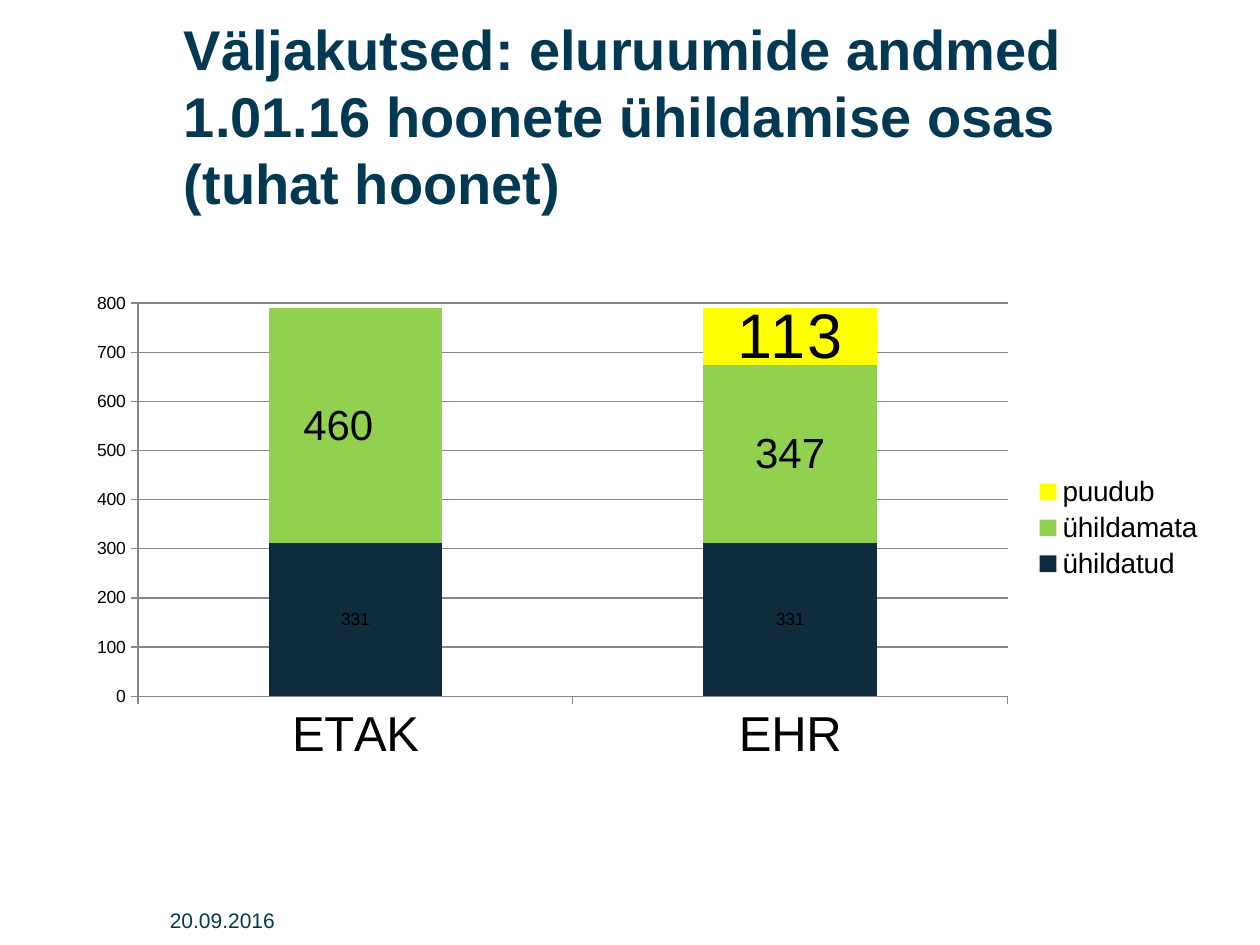
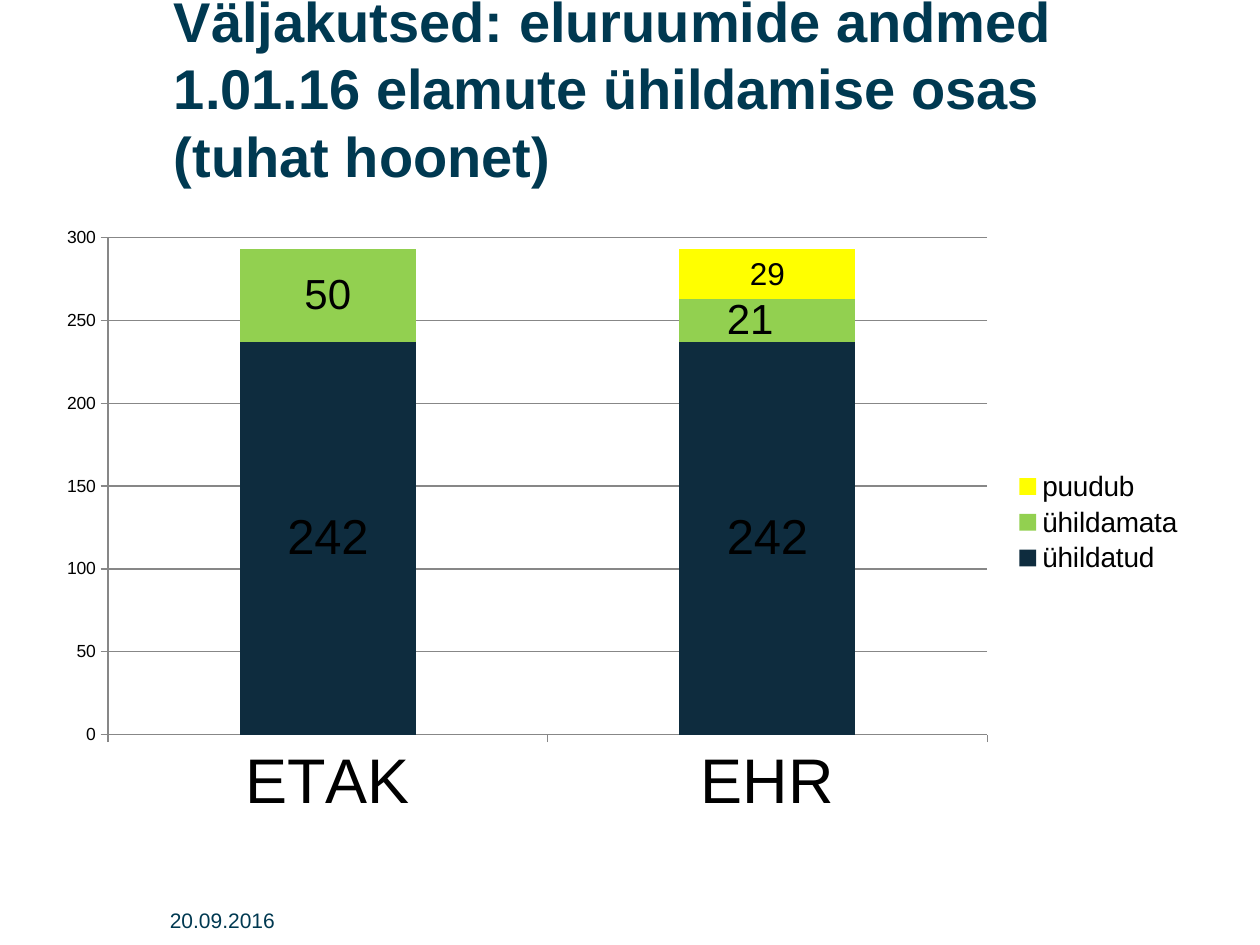
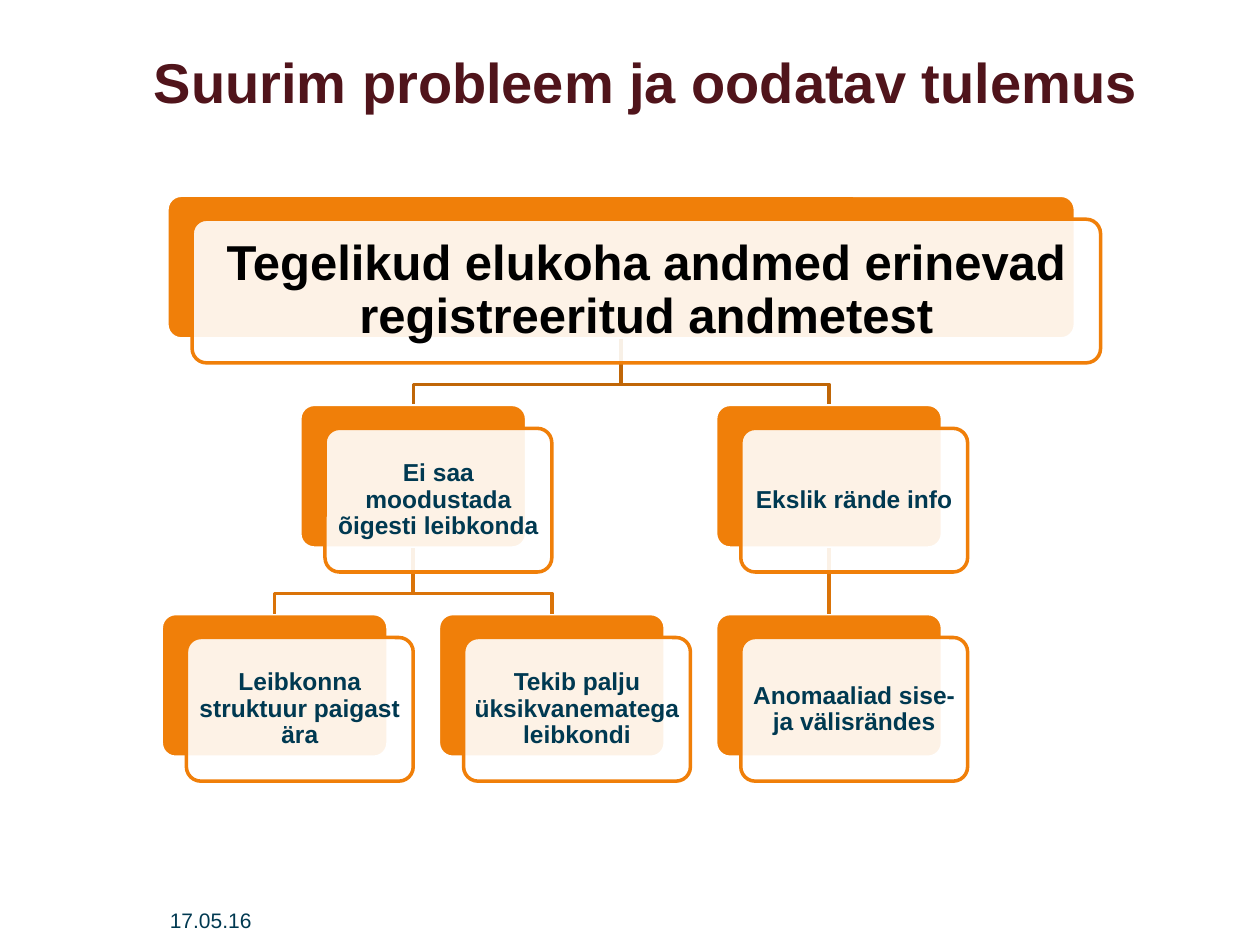
import dataclasses
import typing

import pptx
import pptx.chart.data
import pptx.dml.color
import pptx.enum.chart
import pptx.enum.shapes
import pptx.enum.text
import pptx.oxml.ns
import pptx.oxml.xmlchemy
import pptx.util

Inches = pptx.util.Inches
Pt = pptx.util.Pt

FONT = "Arial"
COLORS = {
    "navy": "003951",
    "maroon": "50141B",
    "black": "000000",
    "white": "FFFFFF",
    "orange": "F07F09",
    "upper_link": "C06607",
    "lower_link": "DA7308",
    "grid": "878787",
    "ühildatud": "0E2C3E",
    "ühildamata": "92D050",
    "puudub": "FFFF00",
}
DATE_BOX = (1.25, 7.1, 2.33, 0.4)
CARD_HEIGHT = 1.14
CARD_WIDTH = 1.8
ROOT_WIDTH = 7.21
COLUMN_STEP = 2.2
LEVEL_STEP = 1.66
FRONT_SHIFT = (0.2, 0.19)
BEND_DROP = 0.36


@dataclasses.dataclass
class Stack:
    """One chart series with its shown labels."""

    name: str
    values: tuple
    labels: tuple
    size: int
    shifted: typing.Optional[int] = None


@dataclasses.dataclass
class Card:
    """One card of the problem tree, centred on a column number."""

    text: str
    column: float
    level: int
    parent: typing.Optional[int] = None


def rgb(name):
    """Return the named colour."""
    return pptx.dml.color.RGBColor.from_string(COLORS[name])


def style_font(font, size, color="black", bold=False):
    """Apply the shared typeface with a size, colour and weight."""
    font.name, font.size, font.bold = FONT, Pt(size), bold
    font.color.rgb = rgb(color)


def fill_text(frame, text, size, color, bold=False, inset=None):
    """Write one vertically centred paragraph and return it."""
    frame.text = text
    frame.word_wrap = True
    frame.auto_size = pptx.enum.text.MSO_AUTO_SIZE.NONE
    frame.vertical_anchor = pptx.enum.text.MSO_ANCHOR.MIDDLE
    if inset is not None:
        frame.margin_left = frame.margin_right = Inches(inset)
        frame.margin_top = frame.margin_bottom = Inches(inset)
    para = frame.paragraphs[0]
    para.alignment = pptx.enum.text.PP_ALIGN.LEFT
    for span in para.runs:
        style_font(span.font, size, color, bold)
    return para


def add_page(deck, title, box, date, color="navy"):
    """Add a page with its title and date."""
    page = deck.slides.add_slide(deck.slide_layouts[5])
    heading = page.shapes.title
    heading.left, heading.top, heading.width, heading.height = map(Inches, box)
    fill_text(heading.text_frame, title, 32, color, True, 0)
    stamp = page.shapes.add_textbox(*map(Inches, DATE_BOX))
    fill_text(stamp.text_frame, date, 12, "navy")
    return page


def shift_label(labels, index, offset):
    """Move a point label sideways by a share of the chart width."""
    make = pptx.oxml.xmlchemy.OxmlElement
    layout, manual = make("c:layout"), make("c:manualLayout")
    layout.append(manual)
    for tag, value in (("c:x", offset), ("c:y", 0)):
        item = make(tag)
        item.set("val", str(value))
        manual.append(item)
    labels._element.findall(pptx.oxml.ns.qn("c:dLbl"))[index].insert(1, layout)


def style_series(series, stack):
    """Colour a series and write its point labels."""
    series.format.fill.solid()
    series.format.fill.fore_color.rgb = rgb(stack.name)
    labels = series.data_labels
    labels.show_value = True
    style_font(labels.font, stack.size)
    for index, text in enumerate(stack.labels):
        if text:
            frame = series.points[index].data_label.text_frame
            frame.text = text
            style_font(frame.paragraphs[0].runs[0].font, stack.size)
    if stack.shifted is not None:
        shift_label(labels, stack.shifted, -0.015)


def add_stacked_chart(page, box, stacks, maximum, step, category_size):
    """Place a stacked column chart in the box."""
    data = pptx.chart.data.CategoryChartData()
    data.categories = ["ETAK", "EHR"]
    for stack in stacks:
        data.add_series(stack.name, stack.values)
    kind = pptx.enum.chart.XL_CHART_TYPE.COLUMN_STACKED
    chart = page.shapes.add_chart(kind, *map(Inches, box), data).chart
    chart.has_title = False
    style_font(chart.font, 10)
    chart.has_legend = True
    chart.legend.position = pptx.enum.chart.XL_LEGEND_POSITION.RIGHT
    chart.legend.include_in_layout = False
    style_font(chart.legend.font, 16)
    plot = chart.plots[0]
    plot.gap_width, plot.overlap, plot.vary_by_categories = 150, 100, False
    for series, stack in zip(plot.series, stacks):
        style_series(series, stack)
    scale = chart.value_axis
    scale.minimum_scale, scale.maximum_scale, scale.major_unit = 0, maximum, step
    scale.major_gridlines.format.line.color.rgb = rgb("grid")
    for axis, size in ((scale, 10), (chart.category_axis, category_size)):
        axis.major_tick_mark = pptx.enum.chart.XL_TICK_MARK.OUTSIDE
        axis.format.line.color.rgb = rgb("grid")
        style_font(axis.tick_labels.font, size)


def add_rounded(page, box, fill, line):
    """Add a rounded rectangle with a plain fill and outline."""
    kind = pptx.enum.shapes.MSO_SHAPE.ROUNDED_RECTANGLE
    shape = page.shapes.add_shape(kind, *map(Inches, box))
    shape.adjustments[0] = 0.1
    shape.shadow.inherit = False
    shape.fill.solid()
    shape.fill.fore_color.rgb = rgb(fill)
    shape.line.color.rgb = rgb(line)
    shape.line.width = Pt(2)
    return shape


def add_front(page, back_box, card):
    """Lay the translucent text card over its back card."""
    left, top, width, height = back_box
    box = (left + FRONT_SHIFT[0], top + FRONT_SHIFT[1], width, height)
    front = add_rounded(page, box, "white", "orange")
    color = front.fill._xPr.find(".//" + pptx.oxml.ns.qn("a:srgbClr"))
    alpha = pptx.oxml.xmlchemy.OxmlElement("a:alpha")
    alpha.set("val", "90000")
    color.append(alpha)
    size, ink, inset = (14, "navy", 0.02) if card.level else (28, "black", 0.08)
    para = fill_text(front.text_frame, card.text, size, ink, True, inset)
    para.alignment = pptx.enum.text.PP_ALIGN.CENTER
    para.line_spacing = 0.9


def add_link(page, parent, child, color):
    """Join the bottom of one back card to the top of another."""
    start_x, start_y = parent.left + parent.width // 2, parent.top + parent.height
    end_x, end_y = child.left + child.width // 2, child.top
    if start_x == end_x:
        kind = pptx.enum.shapes.MSO_CONNECTOR.STRAIGHT
        link = page.shapes.add_connector(kind, start_x, start_y, end_x, end_y)
        link.begin_connect(parent, 2)
        link.end_connect(child, 0)
        link._element.spPr.append(pptx.oxml.xmlchemy.OxmlElement("a:effectLst"))
    else:
        bend_y = start_y + Inches(BEND_DROP)
        outline = page.shapes.build_freeform(start_x, start_y)
        corners = [(start_x, bend_y), (end_x, bend_y), (end_x, end_y)]
        outline.add_line_segments(corners, close=False)
        link = outline.convert_to_shape()
        link.fill.background()
        link.shadow.inherit = False
    link.line.color.rgb = rgb(color)
    link.line.width = Pt(2)


def add_tree(page, left, top, cards):
    """Place the problem tree from its upper left corner."""
    boxes = []
    for card in cards:
        width = CARD_WIDTH if card.level else ROOT_WIDTH
        centre = left + CARD_WIDTH / 2 + card.column * COLUMN_STEP
        box = (centre - width / 2, top + card.level * LEVEL_STEP, width, CARD_HEIGHT)
        boxes.append(box)
    backs = [add_rounded(page, box, "orange", "white") for box in boxes]
    for card, back in zip(cards, backs):
        if card.parent is not None:
            color = "upper_link" if card.level == 1 else "lower_link"
            add_link(page, backs[card.parent], back, color)
    for card, box in zip(cards, boxes):
        add_front(page, box, card)


def main():
    """Build the three pages and save the deck."""
    deck = pptx.Presentation()
    deck.slide_width, deck.slide_height = Inches(10), Inches(7.5)

    title = "Väljakutsed: eluruumide andmed 1.01.16 {} ühildamise osas (tuhat hoonet)"
    page = add_page(deck, title.format("hoonete"), (1.46, 0.52, 8.19, 0.79), "20.09.2016")
    buildings = [
        Stack("ühildatud", (311, 311), ("331", "331"), 10),
        Stack("ühildamata", (478, 362), ("460", "347"), 24, shifted=0),
        Stack("puudub", (None, 116), (None, "113"), 36),
    ]
    add_stacked_chart(page, (0.59, 2.25, 9.07, 3.88), buildings, 800, 100, 28)

    page = add_page(deck, title.format("elamute"), (1.38, 0, 8.19, 1.39), "20.09.2016")
    dwellings = [
        Stack("ühildatud", (237, 237), ("242", "242"), 28),
        Stack("ühildamata", (56, 26), ("50", "21"), 24, shifted=1),
        Stack("puudub", (None, 30), (None, "29"), 18),
    ]
    add_stacked_chart(page, (0.35, 1.71, 9.15, 4.87), dwellings, 300, 50, 36)

    page = add_page(
        deck, "Suurim probleem ja oodatav tulemus", (1.22, 0.21, 8.35, 0.87), "17.05.16", "maroon"
    )
    cards = [
        Card("Tegelikud elukoha andmed erinevad registreeritud andmetest", 1.25, 0),
        Card("Ei saa moodustada õigesti leibkonda", 0.5, 1, 0),
        Card("Leibkonna struktuur paigast ära", 0, 2, 1),
        Card("Tekib palju üksikvanematega leibkondi", 1, 2, 1),
        Card("Ekslik rände info", 2, 1, 0),
        Card("Anomaaliad sise-ja välisrändes", 2, 2, 4),
    ]
    add_tree(page, 1.28, 1.55, cards)
    deck.save("out.pptx")


if __name__ == "__main__":
    main()
